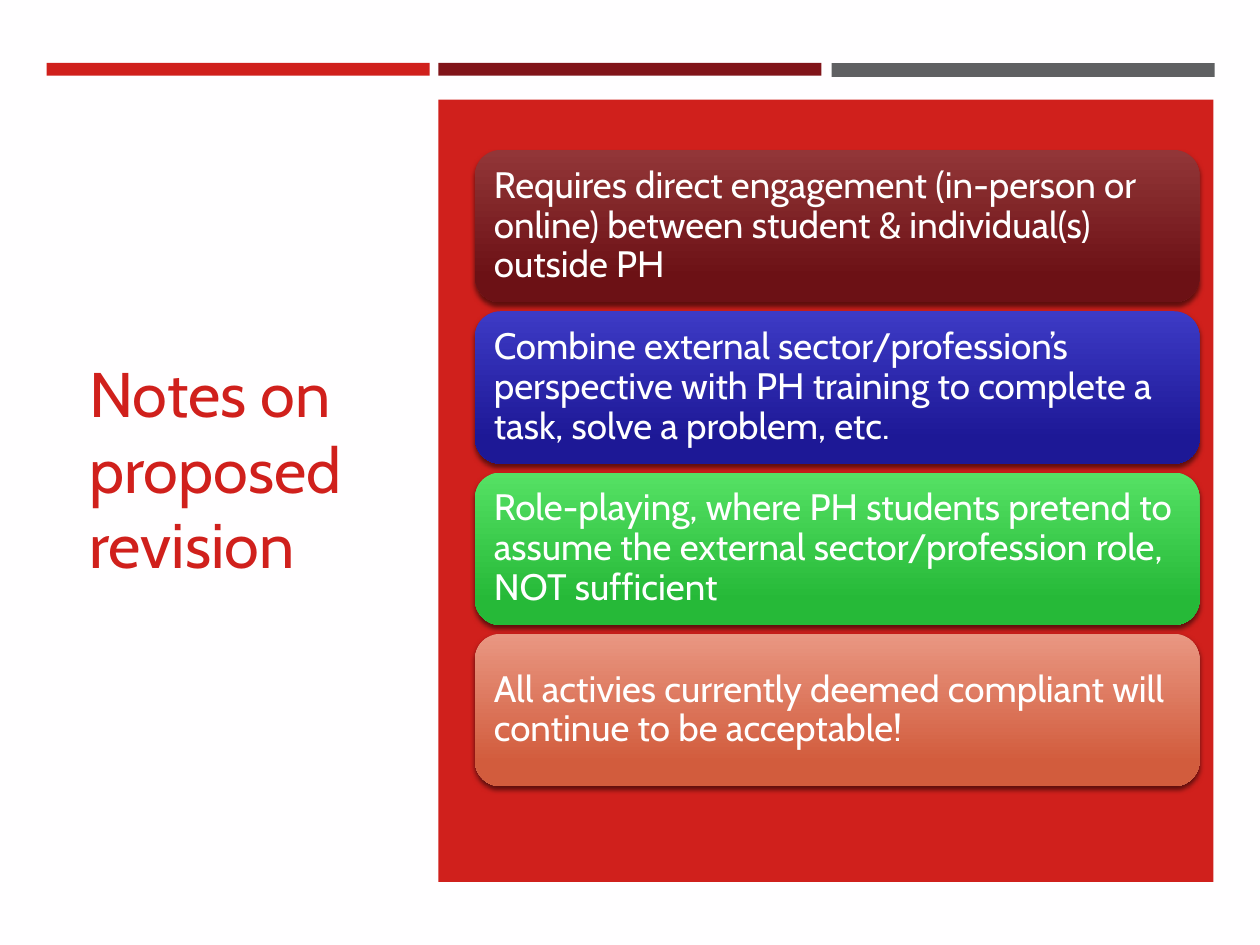
from dataclasses import dataclass

from lxml import etree
from pptx import Presentation
from pptx.dml.color import RGBColor
from pptx.enum import shapes, text
from pptx.oxml import ns
from pptx.util import Inches, Pt

FONT = "Cabin"
RED = "D0201C"
WHITE = "FFFFFF"


@dataclass
class Bar:
    left: float
    top: float
    width: float
    height: float
    color: str


@dataclass
class Note:
    wording: str
    light: str
    dark: str


BARS = [
    Bar(0.37, 0.5, 3.04, 0.1, RED),
    Bar(3.48, 0.5, 3.04, 0.1, "811419"),
    Bar(6.6, 0.5, 3.04, 0.11, "5F6062"),
    Bar(3.48, 0.79, 6.15, 6.21, RED),  # panel behind the notes
]
NOTES = [
    Note("Requires direct engagement (in-person or online) between student "
         "& individual(s) outside PH", "923638", "6C1115"),
    Note("Combine external sector/profession’s perspective with PH training "
         "to complete a task, solve a problem, etc.", "3D3AC5", "1D1896"),
    Note("Role-playing, where PH students pretend to assume the external "
         "sector/profession role, NOT sufficient", "55E164", "26B938"),
    Note("All activies currently deemed compliant will continue to be "
         "acceptable!", "E99782", "D25C3D"),
]
NOTE_LEFT, NOTE_TOP, NOTE_WIDTH, NOTE_HEIGHT = 3.77, 1.19, 5.75, 1.21
NOTE_STEP = 1.28


def rgb(color: str) -> RGBColor:
    return RGBColor.from_string(color)


def style_text(frame, size: float, color: str) -> None:
    frame.word_wrap = True
    frame.auto_size = text.MSO_AUTO_SIZE.NONE
    frame.vertical_anchor = text.MSO_ANCHOR.MIDDLE
    para = frame.paragraphs[0]
    para.alignment = text.PP_ALIGN.LEFT
    for span in para.runs:
        span.font.name = FONT
        span.font.size = Pt(size)
        span.font.color.rgb = rgb(color)


def add_box(slide, kind, left: float, top: float, width: float, height: float):
    box = slide.shapes.add_shape(
        kind, Inches(left), Inches(top), Inches(width), Inches(height))
    box.shadow.inherit = False
    box.line.fill.background()
    return box


def add_bar(slide, bar: Bar) -> None:
    box = add_box(slide, shapes.MSO_SHAPE.RECTANGLE,
                  bar.left, bar.top, bar.width, bar.height)
    box.fill.solid()
    box.fill.fore_color.rgb = rgb(bar.color)


def add_shadow(box) -> None:
    effects = box._element.spPr.find(ns.qn("a:effectLst"))
    shadow = etree.SubElement(
        effects, ns.qn("a:outerShdw"), blurRad=str(Pt(3)), dist=str(Pt(2)),
        dir="5400000", algn="ctr", rotWithShape="0")
    color = etree.SubElement(shadow, ns.qn("a:srgbClr"), val="000000")
    etree.SubElement(color, ns.qn("a:alpha"), val="55000")


def add_note(slide, note: Note, top: float) -> None:
    box = add_box(slide, shapes.MSO_SHAPE.ROUNDED_RECTANGLE,
                  NOTE_LEFT, top, NOTE_WIDTH, NOTE_HEIGHT)
    box.fill.gradient()
    box.fill.gradient_angle = 270
    stops = zip(box.fill.gradient_stops, (0, 0.84), (note.light, note.dark))
    for stop, position, color in stops:
        stop.position = position
        stop.color.rgb = rgb(color)
    add_shadow(box)

    frame = box.text_frame
    frame.text = note.wording
    frame.margin_left = frame.margin_right = Inches(0.09)
    frame.margin_top = frame.margin_bottom = Inches(0.09)
    style_text(frame, 21, WHITE)
    frame.paragraphs[0].line_spacing = 0.9
    frame.paragraphs[0].space_after = Pt(7)


def main() -> None:
    deck = Presentation()
    deck.slide_width, deck.slide_height = Inches(10), Inches(7.5)
    slide = deck.slides.add_slide(deck.slide_layouts[5])
    slide.background.fill.solid()
    slide.background.fill.fore_color.rgb = rgb("FFFEFF")

    # Title at the left
    title = slide.shapes.title
    title.left, title.top = Inches(0.61), Inches(1.14)
    title.width, title.height = Inches(2.5), Inches(5.15)
    title.text_frame.text = "Notes on proposed revision"
    style_text(title.text_frame, 36, RED)

    # Top bars and panel
    for bar in BARS:
        add_bar(slide, bar)

    # Stacked notes
    for row, note in enumerate(NOTES):
        add_note(slide, note, NOTE_TOP + row * NOTE_STEP)

    deck.save("out.pptx")


if __name__ == "__main__":
    main()
